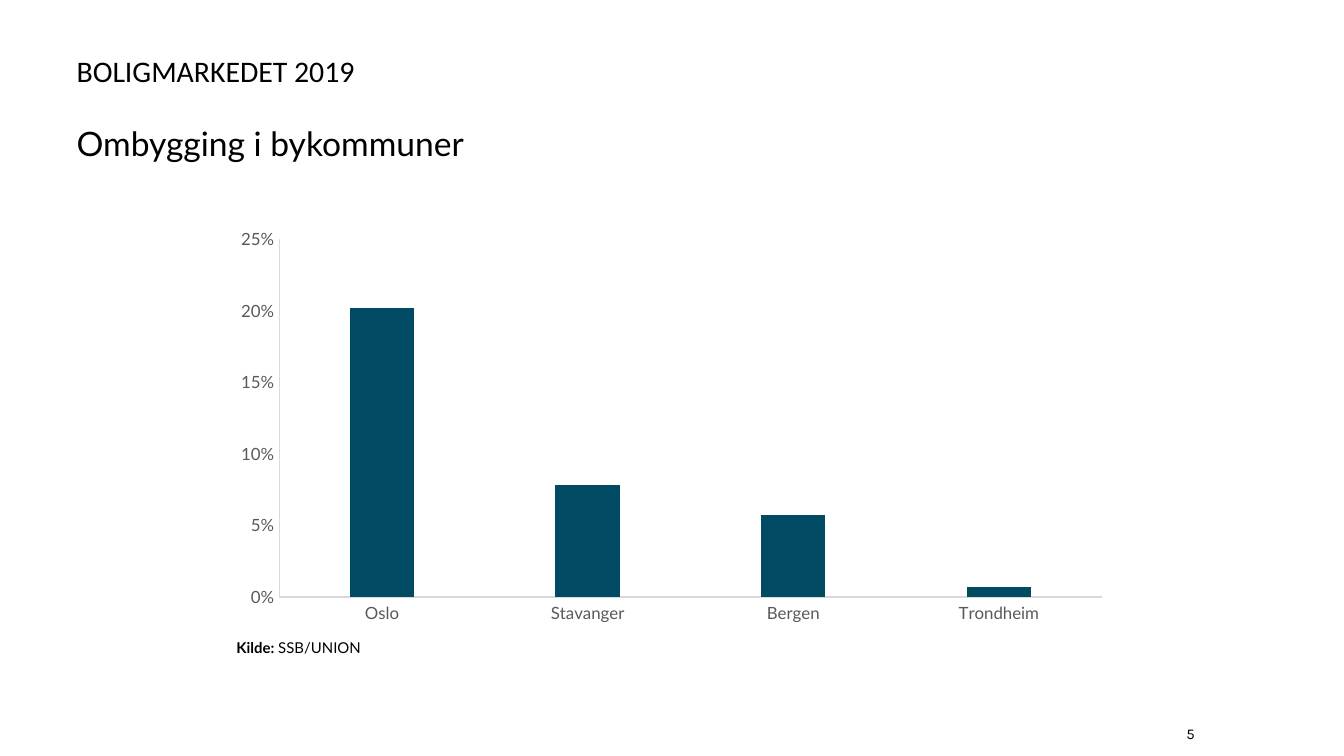
from pptx import Presentation
from pptx.chart.data import CategoryChartData
from pptx.dml.color import RGBColor
from pptx.enum.chart import XL_CHART_TYPE, XL_TICK_MARK
from pptx.enum.text import MSO_ANCHOR, PP_ALIGN
from pptx.util import Pt

COLUMN = XL_CHART_TYPE.COLUMN_CLUSTERED
NO_TICK = XL_TICK_MARK.NONE
TOP, BOTTOM = MSO_ANCHOR.TOP, MSO_ANCHOR.BOTTOM
LEFT, RIGHT = PP_ALIGN.LEFT, PP_ALIGN.RIGHT
PX = 4572  # 200 px to the inch
COLORS = {"text": "000000", "label": "595959", "axis": "D9D9D9", "bar": "004A64"}


def color(name):
    return RGBColor.from_string(COLORS[name])


def style_font(font, **formats):
    for name, value in formats.items():
        setattr(font, name, value)


deck = Presentation()
deck.slide_width, deck.slide_height = 2000 * PX, 1125 * PX
page = deck.slides.add_slide(deck.slide_layouts[6])

# Text: place, margins (side, top), anchor, alignment, font, size, (words, bold) spans
texts = [
    ((114, 183, 1724, 60), (0, 0), TOP, LEFT, "Lato", 18,
     [("Ombygging i bykommuner", False)]),
    ((1714, 1078, 64, 26), (0, 0), TOP, RIGHT, "Karla", 8, [("5", False)]),
    ((114, 78, 1724, 54), (0, 0), BOTTOM, LEFT, "Calibri", 16,
     [("BOLIGMARKEDET 2019", False)]),
    ((332, 941, 1382, 48), (20, 10), TOP, LEFT, "Lato", 8,
     [("Kilde: ", True), ("SSB/UNION", False)]),
]
for place, (side, top), anchor, alignment, typeface, size, spans in texts:
    box = page.shapes.add_textbox(*(length * PX for length in place))
    frame = box.text_frame
    frame.word_wrap = True
    frame.vertical_anchor = anchor
    frame.margin_left = frame.margin_right = side * PX
    frame.margin_top = frame.margin_bottom = top * PX
    para = frame.paragraphs[0]
    para.alignment = alignment
    for words, bold in spans:
        span = para.add_run()
        span.text = words
        style_font(span.font, name=typeface, size=Pt(size), bold=bold)
        span.font.color.rgb = color("text")

# Share of conversions per city
data = CategoryChartData(number_format="0%")
data.categories = ["Oslo", "Stavanger", "Bergen", "Trondheim"]
data.add_series("Series 1", [0.202, 0.078, 0.057, 0.007])
chart = page.shapes.add_chart(
    COLUMN, 332 * PX, 328 * PX, 1334 * PX, 612 * PX, data).chart
chart.has_legend = False
chart.has_title = False
style_font(chart.font, name="Lato", size=Pt(9))
chart.font.color.rgb = color("text")

plot = chart.plots[0]
plot.gap_width = 219
plot.overlap = -27
plot.vary_by_categories = False
bars = plot.series[0].format.fill
bars.solid()
bars.fore_color.rgb = color("bar")

for axis in (chart.category_axis, chart.value_axis):
    axis.has_major_gridlines = False
    axis.major_tick_mark = axis.minor_tick_mark = NO_TICK
    axis.format.line.width = Pt(0.75)
    axis.format.line.color.rgb = color("axis")
    style_font(axis.tick_labels.font, name="Lato", size=Pt(9), bold=False)
    axis.tick_labels.font.color.rgb = color("label")

percent = chart.value_axis
percent.minimum_scale, percent.maximum_scale, percent.major_unit = 0, 0.25, 0.05
percent.tick_labels.number_format = "0%"
percent.tick_labels.number_format_is_linked = False

deck.save("out.pptx")
